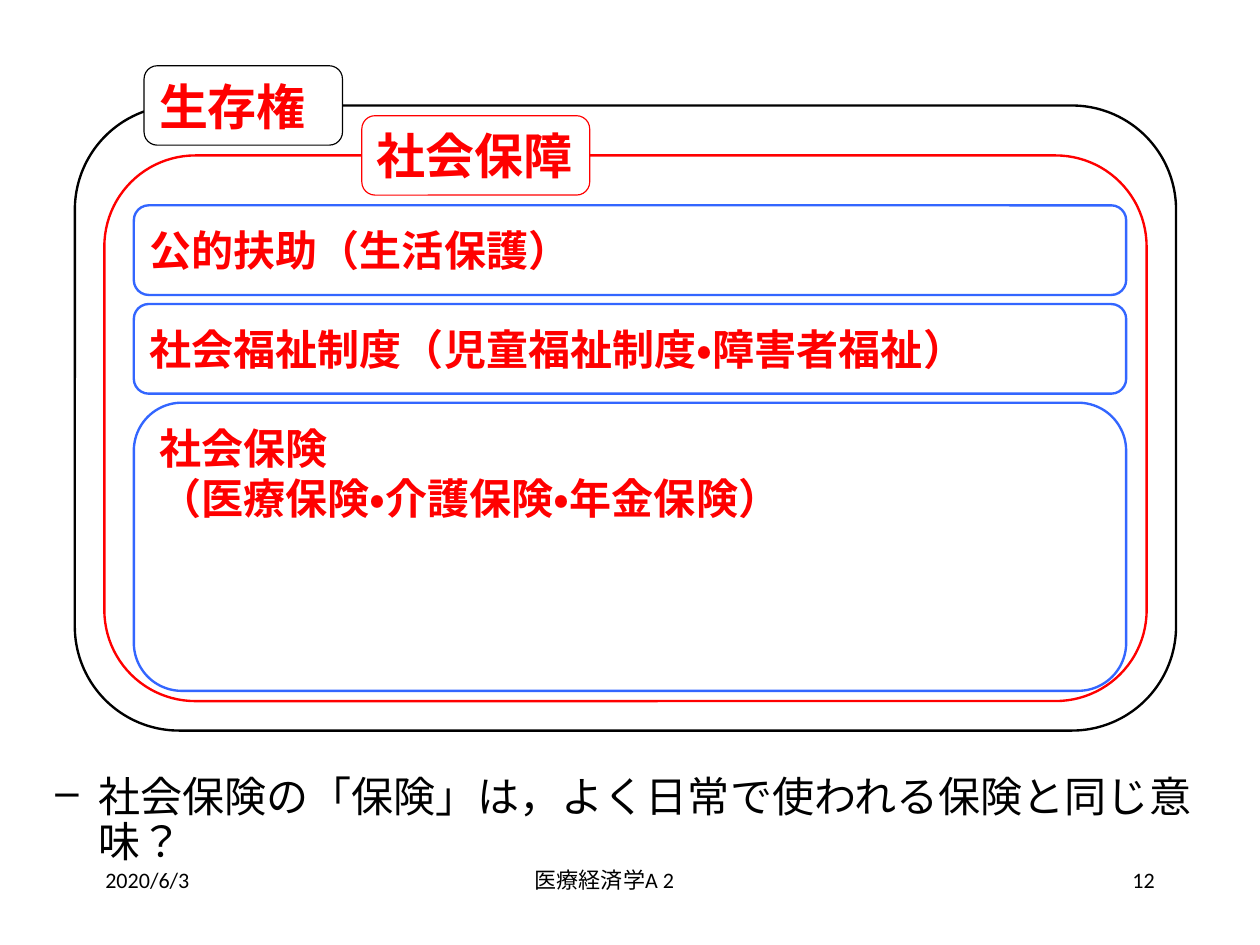
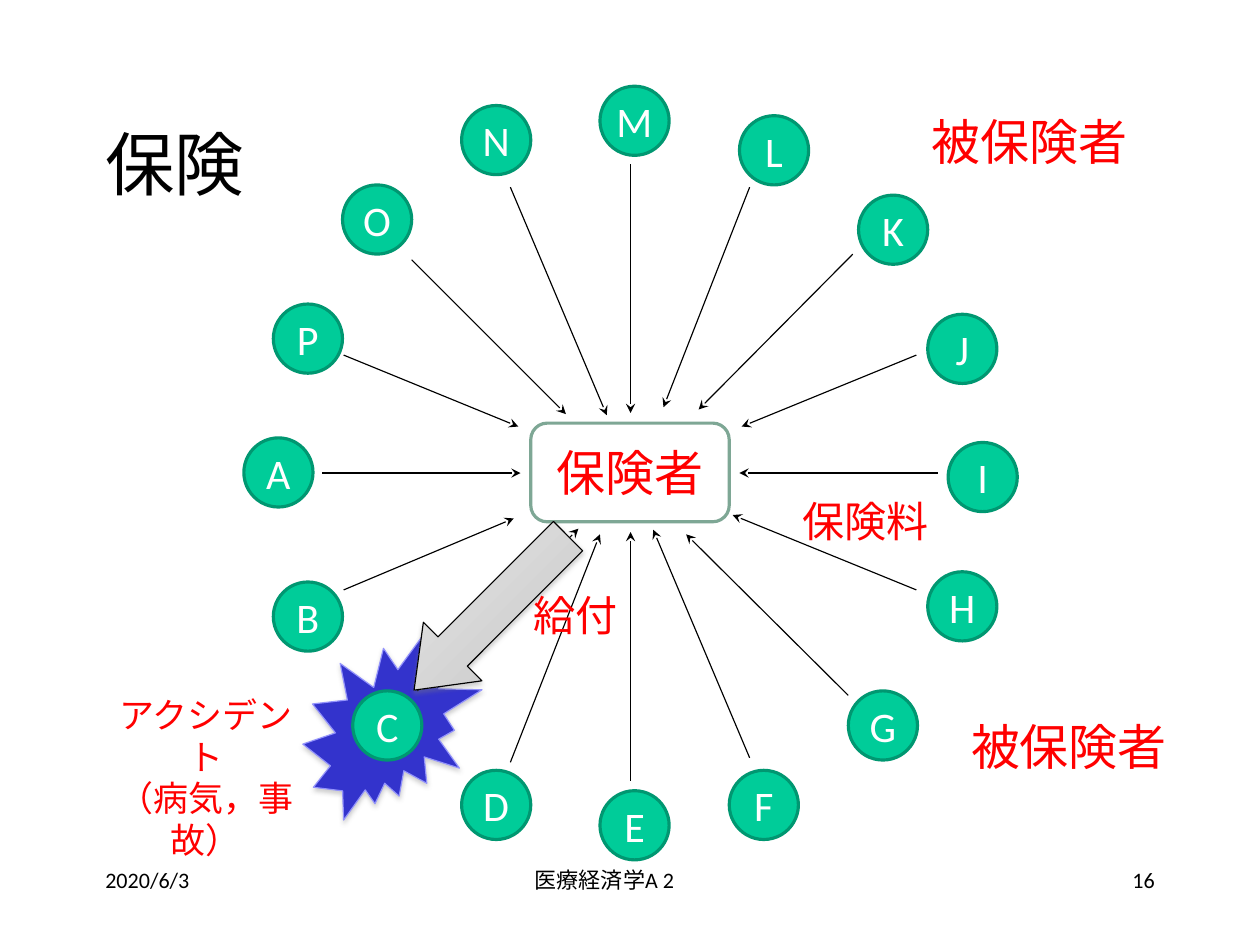
from lxml import etree
from pptx import Presentation
from pptx import util as u
from pptx.dml.color import RGBColor
from pptx.enum import dml, lang, shapes, text
from pptx.oxml import parse_xml
from pptx.oxml.ns import nsdecls, qn

PX = 9144
W, H = 1111, 833
BLACK, WHITE, RED, BLUE = "000000", "FFFFFF", "FF0000", "3366FF"
GREEN, DARK_GREEN, HUB_LINE = "00CC99", "009771", "7EA795"
BURST, BURST_LINE = "3333CC", "9393FC"
LEFT, CENTER, RIGHT = text.PP_ALIGN.LEFT, text.PP_ALIGN.CENTER, text.PP_ALIGN.RIGHT
TOP, MIDDLE = text.MSO_ANCHOR.TOP, text.MSO_ANCHOR.MIDDLE
SHAPE = shapes.MSO_SHAPE
DISC = 61

MEMBERS = [
    ("A", (215, 386), (284, 417), (459, 417)),
    ("B", (241, 513), (303, 520), (453, 457)),
    ("C", (311, 609), (368, 609), (510, 466)),
    ("D", (407, 679), (450, 672), (529, 471)),
    ("E", (529, 697), (556, 688), (556, 469)),
    ("F", (643, 679), (661, 668), (576, 467)),
    ("G", (748, 609), (748, 613), (605, 471)),
    ("H", (818, 504), (808, 520), (646, 454)),
    ("I", (836, 390), (827, 417), (652, 417)),
    ("J", (818, 277), (808, 313), (654, 376)),
    ("K", (757, 172), (752, 224), (616, 361)),
    ("L", (652, 102), (661, 165), (585, 359)),
    ("M", (529, 76), (556, 145), (556, 364)),
    ("N", (407, 93), (450, 165), (535, 366)),
    ("O", (302, 163), (363, 229), (499, 365)),
    ("P", (241, 268), (303, 313), (457, 376)),
]


def emu(*lengths):
    return [u.Emu(n * PX) for n in lengths]


def rgb(value):
    return RGBColor.from_string(value)


def write(sp, content, size=26.7, color=RED, font="Arial", bold=False,
          align=LEFT, anchor=TOP, wrap=False):
    tf = sp.text_frame
    tf.word_wrap = wrap
    tf.vertical_anchor = anchor
    for i, line in enumerate(content.split("\n")):
        p = tf.add_paragraph() if i else tf.paragraphs[0]
        p.alignment = align
        r = p.add_run()
        r.text = line
        r.font.size = u.Pt(size)
        r.font.name = font
        r.font.bold = bold
        r.font.color.rgb = rgb(color)
        r.font.language_id = lang.MSO_LANGUAGE_ID.JAPANESE
    return sp


def label(s, box, content, **fmt):
    return write(s.shapes.add_textbox(*emu(*box)), content, **fmt)


def shape(s, kind, box, line, width, fill=None):
    sp = s.shapes.add_shape(kind, *emu(*box))
    sp.shadow.inherit = False
    sp.line.color.rgb = rgb(line)
    sp.line.width = u.Pt(width)
    if fill:
        sp.fill.solid()
        sp.fill.fore_color.rgb = rgb(fill)
    else:
        sp.fill.background()
    return sp


def arrow_line(s, start, end):
    c = s.shapes.add_connector(shapes.MSO_CONNECTOR.STRAIGHT, *emu(*start, *end))
    c.line.color.rgb = rgb(BLACK)
    c.line.width = u.Pt(0.75)
    etree.SubElement(c.line._get_or_add_ln(), qn("a:tailEnd"), type="stealth")
    etree.SubElement(c._element.spPr, qn("a:effectLst"))


def drop_shadow(sp):
    effects = sp._element.spPr.find(qn("a:effectLst"))
    effects.append(parse_xml(
        f'<a:outerShdw {nsdecls("a")} blurRad="{u.Pt(3.1)}" dist="{u.Pt(1.6)}" '
        'dir="5400000" rotWithShape="0"><a:srgbClr val="808080">'
        '<a:alpha val="38000"/></a:srgbClr></a:outerShdw>'))


def gradient(sp, stops):
    gs = "".join(f'<a:gs pos="{pos * 1000}"><a:srgbClr val="{color}"/></a:gs>'
                 for pos, color in stops)
    spPr = sp._element.spPr
    spPr.replace(spPr.find(qn("a:noFill")), parse_xml(
        f'<a:gradFill {nsdecls("a")} rotWithShape="1"><a:gsLst>{gs}</a:gsLst>'
        '<a:lin ang="5400000" scaled="0"/></a:gradFill>'))


def bullet(sp, char, indent):
    p = sp.text_frame.paragraphs[0]
    p.line_spacing = 0.9
    p.space_before = u.Pt(5.3)
    pPr = p._p.get_or_add_pPr()
    width = emu(indent)[0]
    pPr.set("marL", str(width))
    pPr.set("indent", str(-width))
    etree.SubElement(pPr, qn("a:buChar"), char=char)


def footer(s, number):
    for x, w, content, align in [(796, 232, str(number), RIGHT),
                                 (83, 232, "2020/6/3", LEFT),
                                 (248, 570, "医療経済学A 2", CENTER)]:
        label(s, (x, 759, w, 56), content, size=14, color=BLACK,
              font="Calibri", align=align, wrap=True)


def frame(s, box, tag_box, tag, color):
    shape(s, SHAPE.ROUNDED_RECTANGLE, box, color, 1.5)
    sp = shape(s, SHAPE.ROUNDED_RECTANGLE, tag_box, color, 0.75, WHITE)
    write(sp, tag, size=31.1, bold=True, anchor=MIDDLE)


def security_slide(prs):
    s = prs.slides.add_slide(prs.slide_layouts[6])
    frame(s, (66, 93, 971, 551), (127, 58, 175, 70), "生存権", BLACK)
    frame(s, (92, 137, 919, 481), (319, 102, 201, 70), "社会保障", RED)
    top, gap = 181, 8
    for height, content, anchor in [
            (79, "公的扶助（生活保護）", MIDDLE),
            (79, "社会福祉制度（児童福祉制度・障害者福祉）", MIDDLE),
            (254, "社会保険\n（医療保険・介護保険・年金保険）", TOP)]:
        sp = shape(s, SHAPE.ROUNDED_RECTANGLE, (118, top, 875, height), BLUE, 1.5)
        write(sp, content, bold=True, anchor=anchor)
        top += height + gap
    question = label(s, (39, 679, 1032, 70),
                     "社会保険の「保険」は，よく日常で使われる保険と同じ意味？",
                     color=BLACK, font="Calibri", wrap=True)
    bullet(question, "–", 38)
    footer(s, 12)


def insurance_slide(prs):
    s = prs.slides.add_slide(prs.slide_layouts[6])
    burst = shape(s, SHAPE.EXPLOSION2, (267, 557, 158, 166), BURST_LINE, 0.75, BURST)
    drop_shadow(burst)
    label(s, (83, 74, 944, 139), "保険", size=44, color=BLACK, font="Calibri",
          anchor=MIDDLE, wrap=True)
    shape(s, SHAPE.ROUNDED_RECTANGLE, (468, 373, 175, 87), HUB_LINE, 2)
    for name, corner, start, end in MEMBERS:
        disc = shape(s, SHAPE.OVAL, (*corner, DISC, DISC), DARK_GREEN, 2, GREEN)
        write(disc, name, color=WHITE, font="Calibri", align=CENTER, anchor=MIDDLE)
        arrow_line(s, start, end)
    benefit = shape(s, SHAPE.LEFT_ARROW, (337, 504, 192, 73), BLACK, 0.75)
    benefit.adjustments[1] = 0.66
    benefit.rotation = 315
    gradient(benefit, [(0, "EDEDED"), (65, "D0D0D0"), (100, "BCBCBC")])
    drop_shadow(benefit)
    for box, content, size in [((480, 385, 151, 62), "保険者", 31.1),
                               ((810, 93, 195, 62), "被保険者", 31.1),
                               ((697, 432, 132, 55), "保険料", 26.7),
                               ((460, 515, 95, 55), "給付", 26.7),
                               ((845, 627, 195, 62), "被保険者", 31.1)]:
        label(s, box, content, size=size, align=CENTER)
    label(s, (83, 606, 197, 85), "アクシデント\n（病気，事故）", size=22.2,
          align=CENTER, wrap=True)
    footer(s, 16)


def main():
    prs = Presentation()
    prs.slide_width, prs.slide_height = emu(W, H)
    security_slide(prs)
    insurance_slide(prs)
    prs.save("out.pptx")


if __name__ == "__main__":
    main()
